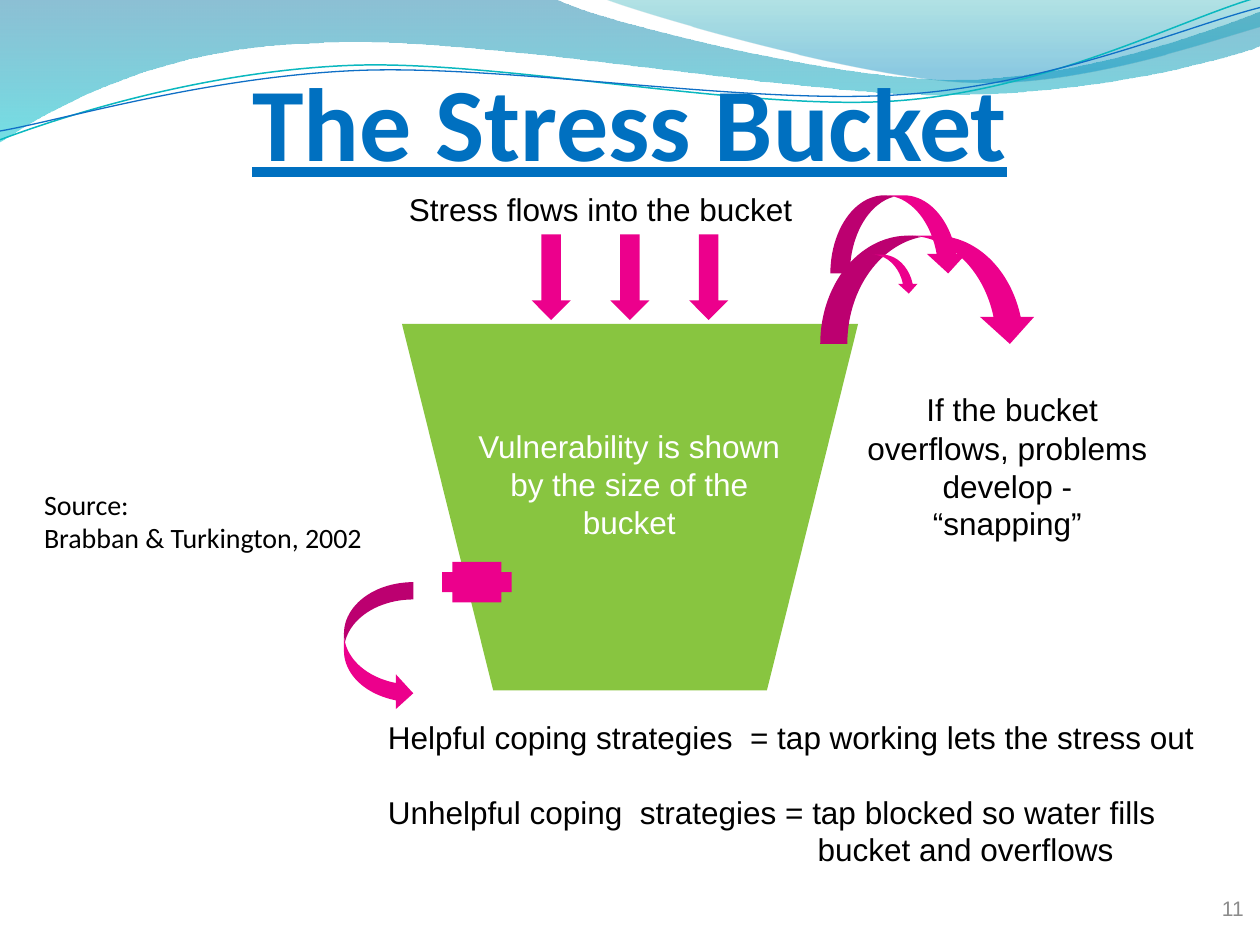
import pptx
import pptx.util
import pptx.dml.color
import pptx.enum.shapes
import pptx.enum.text
import pptx.oxml
import pptx.oxml.ns
import lxml.etree

Inches = pptx.util.Inches
Pt = pptx.util.Pt
qn = pptx.oxml.ns.qn
SHAPE = pptx.enum.shapes.MSO_SHAPE
ALIGN = pptx.enum.text.PP_ALIGN
ANCHOR = pptx.enum.text.MSO_ANCHOR

COLORS = {
    "bucket": "88C540", "flow": "EC008C", "title": "0070C0",
    "text": "000000", "light": "FFFFFF", "number": "8C8C8C",
    "deep": "0074A1", "aqua": "00C6CF", "teal": "00A1A9", "sky": "008BBF",
    "teal_line": "0AB8BF", "blue_line": "0F6FC6",
}


def rgb(name):
    return pptx.dml.color.RGBColor.from_string(COLORS[name])


def add_wave(slide, box, start, segments, closed):
    left, top, width, height = box
    right, bottom = left + width, top + height
    builder = slide.shapes.build_freeform(Inches(left), Inches(top), scale=1.0)
    builder.add_line_segments([(Inches(right), Inches(top)),
                               (Inches(right), Inches(bottom))], close=closed)
    wave = builder.convert_to_shape()
    wave.shadow.inherit = False
    outline = next(wave._element.spPr.iter(qn("a:path")))
    for command in list(outline):
        outline.remove(command)
    commands = [("a:moveTo", start)]
    commands += [("a:lnTo" if len(s) == 2 else "a:cubicBezTo", s) for s in segments]
    for tag, values in commands:
        command = lxml.etree.SubElement(outline, qn(tag))
        for x, y in zip(values[::2], values[1::2]):
            lxml.etree.SubElement(command, qn("a:pt"),
                                  x=str(Inches(x - left)), y=str(Inches(y - top)))
    if closed:
        lxml.etree.SubElement(outline, qn("a:close"))
    return wave


def add_band(slide, box, start, segments, stops):
    band = add_wave(slide, box, start, segments, True)
    band.line.fill.background()
    band.fill.gradient()
    band.fill.gradient_angle = 270
    for stop, (position, color, _) in zip(band.fill.gradient_stops, stops):
        stop.position = position
        stop.color.rgb = rgb(color)
    tints = list(band._element.spPr.iter(qn("a:srgbClr")))
    for tint, (_, _, opacity) in zip(tints, stops):
        lxml.etree.SubElement(tint, qn("a:alpha"), val=str(opacity * 1000))


def add_ribbon(slide, box, start, segments, color, width):
    ribbon = add_wave(slide, box, start, segments, False)
    ribbon.fill.background()
    ribbon.line.color.rgb = rgb(color)
    ribbon.line.width = Pt(width)


def add_header_waves(slide):
    add_band(slide, (-0.01, -0.01, 10.02, 1.14), (0, 0), [
        (4.4, -0.01), (4.76, 0.17, 6.64, 0.63, 7.58, 0.63),
        (8.53, 0.63, 9.58, 0.26, 10, 0.09), (10.01, 0.36),
        (9.83, 0.44, 8.7, 0.76, 7.46, 0.75), (6.22, 0.75, 3.82, 0.28, 2.57, 0.34),
        (1.29, 0.36, 0.46, 0.83, -0.01, 1.13), (0, 0),
    ], [(0, "deep", 45), (1, "aqua", 55)])
    add_band(slide, (4.79, -0.01, 5.21, 0.7), (4.79, -0.01), [
        (5.09, 0.11, 6.82, 0.62, 7.69, 0.65), (8.56, 0.69, 9.61, 0.32, 10, 0.21),
        (10, 0), (4.79, -0.01),
    ], [(0, "teal", 30), (0.8, "sky", 45)])
    add_ribbon(slide, (0, -0.02, 9.98, 1.13), (0, 1.11), [
        (0.48, 0.93, 1.58, 0.57, 2.77, 0.52), (3.95, 0.47, 5.93, 0.89, 7.13, 0.8),
        (8.33, 0.71, 9.38, 0.15, 9.98, -0.02),
    ], "teal_line", 0.85)
    add_ribbon(slide, (0, 0.06, 10, 0.98), (0, 1.04), [
        (0.47, 0.96, 1.64, 0.61, 2.83, 0.56), (4.03, 0.51, 5.97, 0.84, 7.17, 0.75),
        (8.36, 0.67, 9.41, 0.21, 10, 0.06),
    ], "blue_line", 0.75)


def add_solid(slide, preset, box, color):
    solid = slide.shapes.add_shape(preset, *map(Inches, box))
    solid.shadow.inherit = False
    solid.fill.solid()
    solid.fill.fore_color.rgb = rgb(color)
    solid.line.fill.background()


def add_text(slide, box, lines, size=18, color="text", font="Arial", align=ALIGN.LEFT,
             anchor=ANCHOR.TOP, insets=(0.1, 0.05, 0.1, 0.05), emphasis=False):
    frame = slide.shapes.add_textbox(*map(Inches, box)).text_frame
    frame.word_wrap = True
    frame.vertical_anchor = anchor
    (frame.margin_left, frame.margin_top,
     frame.margin_right, frame.margin_bottom) = map(Inches, insets)
    for index, line in enumerate(lines):
        paragraph = frame.add_paragraph() if index else frame.paragraphs[0]
        paragraph.alignment = align
        for text, run_size in [(line, size)] if isinstance(line, str) else line:
            run = paragraph.add_run()
            run.text = text
            run.font.name = font
            run.font.size = Pt(run_size)
            run.font.color.rgb = rgb(color)
            if emphasis:
                run.font.bold = run.font.underline = True
    return frame


def add_bucket(slide, box):
    left, top, width, height = box
    add_solid(slide, SHAPE.FLOWCHART_MANUAL_OPERATION, box, "bucket")
    add_text(slide, (left + 0.47, top + 0.77, width - 0.95, 1.01),
             ["Vulnerability is shown by the size of the bucket"],
             color="light", align=ALIGN.CENTER)


def add_inflow(slide, box):
    left, top, width, _ = box
    add_text(slide, (left, top, width, 0.44),
             [[(" ", 20), ("Stress flows into the bucket", 18)]])
    for column in range(3):
        add_solid(slide, SHAPE.DOWN_ARROW,
                  (left + 1.15 + column * 0.625, top + 0.43, 0.31, 0.68), "flow")


def add_overflow(slide, box):
    left, top, width, _ = box
    for x, y, arrow_width, arrow_height in (
            (0, 0.32, 1.72, 0.86), (0.08, 0, 1.09, 0.62), (0.16, 0.47, 0.62, 0.31)):
        add_solid(slide, SHAPE.CURVED_DOWN_ARROW,
                  (left + x, top + y, arrow_width, arrow_height), "flow")
    add_text(slide, (left + 0.25, top + 1.47, width - 0.25, 1.35),
             [[(" ", 20), ("If the bucket overflows, problems develop - “snapping”", 18)]],
             align=ALIGN.CENTER, insets=(0.11, 0.05, 0.11, 0.05))


def add_tap(slide, box):
    left, top, width, height = box
    add_solid(slide, SHAPE.CROSS, (left + width - 0.55, top, 0.55, 0.32), "flow")
    add_solid(slide, SHAPE.CURVED_RIGHT_ARROW,
              (left, top + 0.16, 0.55, height - 0.16), "flow")


def add_coping(slide, box):
    frame = add_text(slide, box, [
        "Helpful coping strategies  = tap working lets the stress out",
        "Unhelpful coping  strategies = tap blocked so water fills bucket and overflows",
    ])
    for paragraph, margin in zip(frame.paragraphs, (0.49, 3.9)):
        properties = paragraph._p.get_or_add_pPr()
        properties.set("marL", str(Inches(margin)))
        properties.set("indent", str(Inches(0.49 - margin)))
    frame.paragraphs[1].space_before = Pt(21)


def main():
    deck = pptx.Presentation()
    deck.slide_width, deck.slide_height = Inches(10), Inches(7.5)
    slide = deck.slides.add_slide(deck.slide_layouts[6])
    add_header_waves(slide)
    add_bucket(slide, (3.19, 2.57, 3.62, 2.91))
    add_inflow(slide, (3.07, 1.43, 4.38, 1.11))
    add_coping(slide, (2.49, 5.65, 7.39, 1.68))
    add_overflow(slide, (6.51, 1.55, 2.72, 2.82))
    add_tap(slide, (2.73, 4.46, 1.33, 1.18))
    add_text(slide, (9.6, 7.06, 0.4, 0.32), ["11"], size=12, color="number",
             insets=(0.1, 0.05, 0, 0.05))
    add_text(slide, (0.46, 0.43, 9.08, 1.02), ["The Stress Bucket"], size=59.4,
             color="title", font="Calibri", align=ALIGN.CENTER, anchor=ANCHOR.BOTTOM,
             insets=(0, 0.05, 0, 0), emphasis=True)
    add_text(slide, (0.35, 3.65, 2.84, 0.75), ["Source:", "Brabban & Turkington, 2002"],
             size=16, font="Calibri", anchor=ANCHOR.BOTTOM, insets=(0, 0, 0, 0))
    deck.save("out.pptx")


if __name__ == "__main__":
    main()
